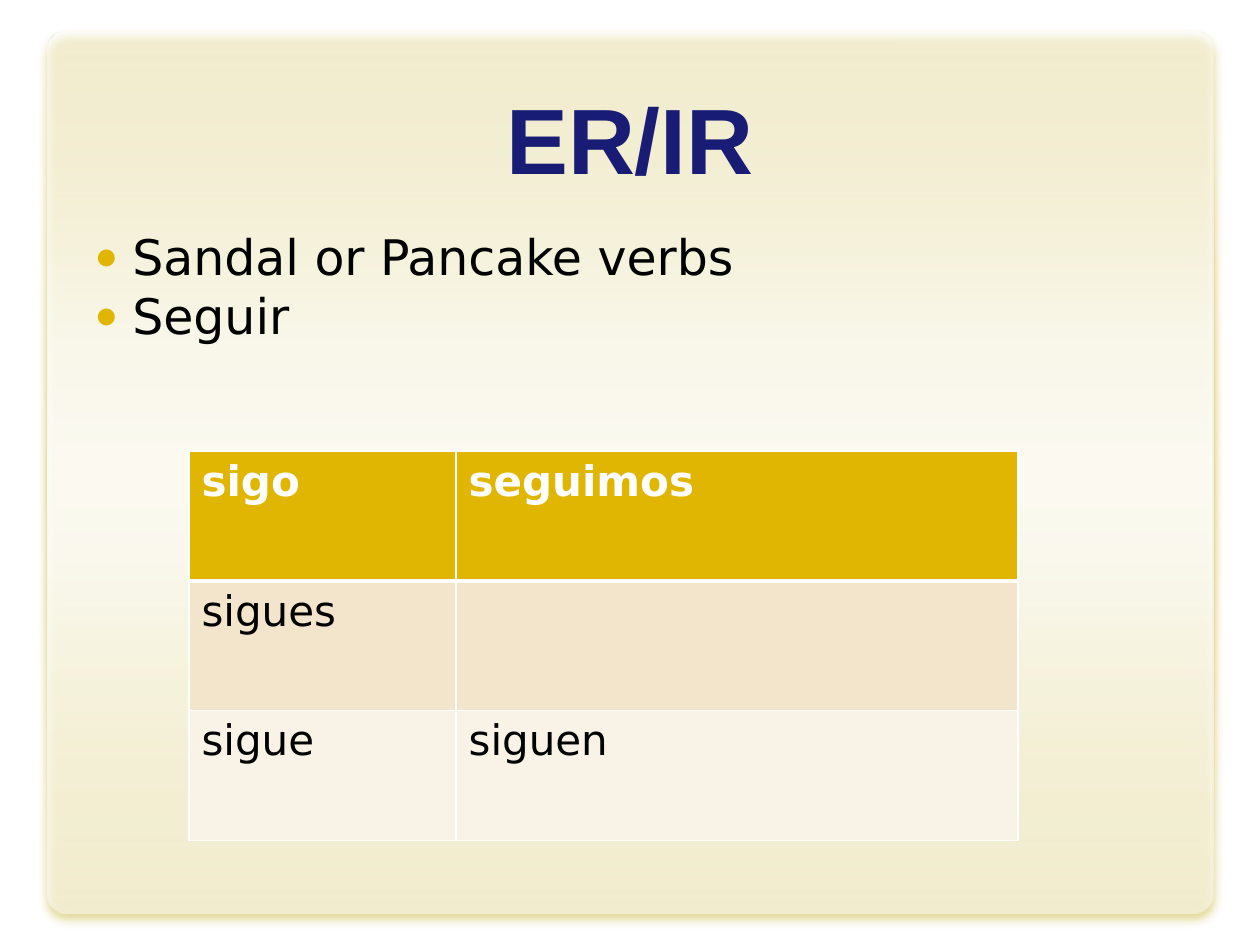
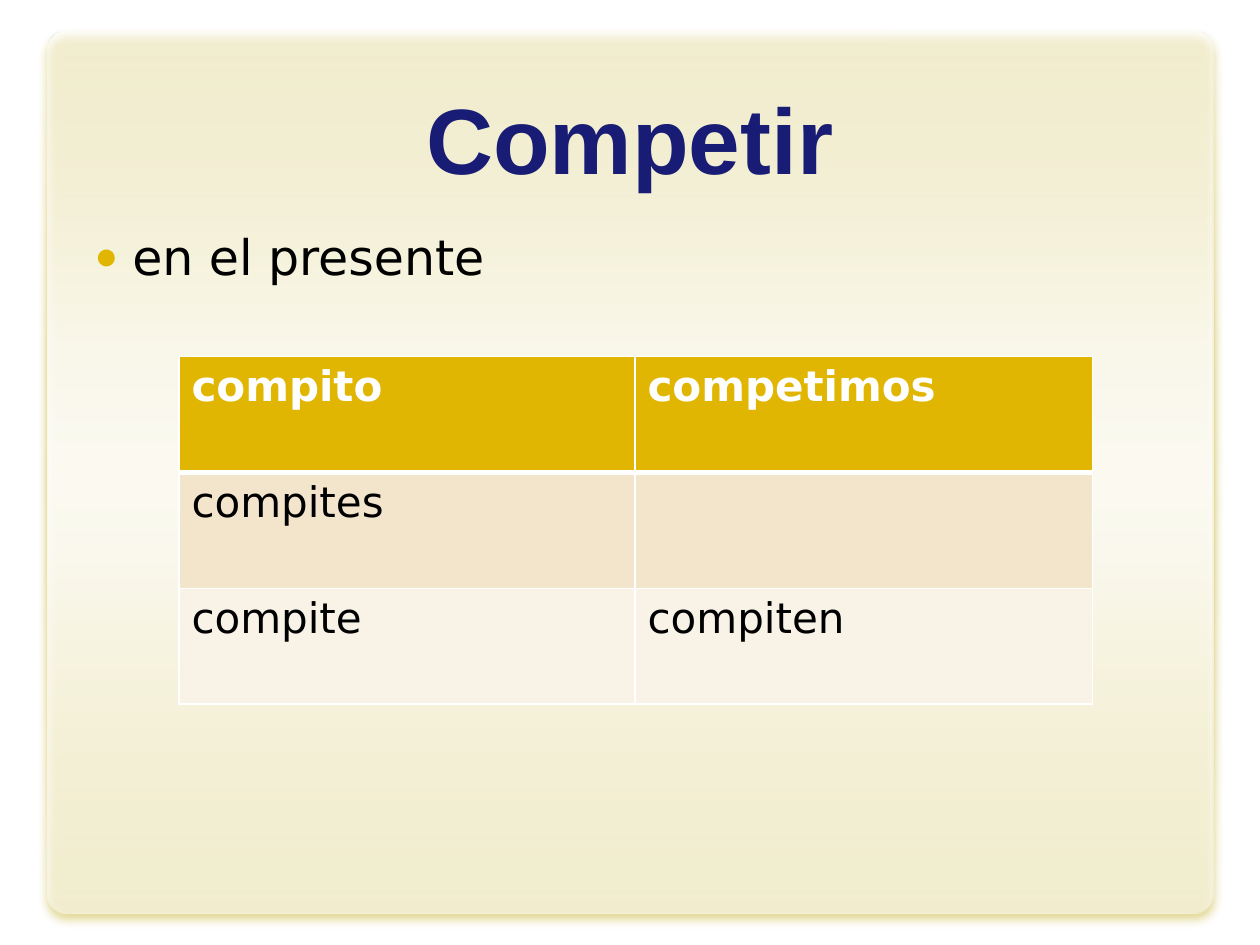
import pptx
import pptx.dml.color
import pptx.enum.shapes
import pptx.enum.text
import pptx.oxml
import pptx.oxml.ns
import pptx.util

inch = pptx.util.Inches
point = pptx.util.Pt
space = pptx.oxml.ns.nsdecls("a")


def hue(code):
    return pptx.dml.color.RGBColor.from_string(code)


def dress(item, style):
    for name, value in style.items():
        if name == "rgb":
            item.color.rgb = hue(value)
        else:
            setattr(item, name, value)


gold = "E0B602"
white = "FFFFFF"
black = "000000"
stops = [(0, 50), (35, 87), (50, 92), (60, 89), (100, 55)]
head = {"name": "Arial", "size": point(53), "bold": True, "rgb": "181C74"}
item = {"name": "DejaVu Sans", "size": point(28), "bold": False, "rgb": black}
top = {"name": "DejaVu Sans", "size": point(24), "bold": True, "rgb": white}
cell = {**top, "bold": False, "rgb": black}
bands = [(gold, top), ("F3E5CC", cell), ("F9F3E7", cell)]
frame = {"word_wrap": True, "auto_size": pptx.enum.text.MSO_AUTO_SIZE.NONE}
inset = {"margin_" + side: inch(0.05) for side in ("left", "top", "right", "bottom")}
spots = [(0.5, 0.33, 9, 1.25), (0.5, 1.75, 9, 4.95)]

pages = [
    {
        "title": "ER/IR",
        "list": ["Sandal or Pancake verbs", "Seguir"],
        "at": (1.5, 3.58),
        "cols": (2.12, 4.46),
        "high": 1.03,
        "verbs": [("sigo", "seguimos"), ("sigues", ""), ("sigue", "siguen")],
    },
    {
        "title": "Competir",
        "list": ["en el presente"],
        "at": (1.42, 2.83),
        "cols": (3.62, 3.63),
        "high": 0.92,
        "verbs": [("compito", "competimos"), ("compites", ""), ("compite", "compiten")],
    },
]

deck = pptx.Presentation()
dress(deck, {"slide_width": inch(10), "slide_height": inch(7.5)})
layout = deck.slide_layouts[1]

for page in pages:
    slide = deck.slides.add_slide(layout)

    panel = slide.shapes.add_shape(
        pptx.enum.shapes.MSO_SHAPE.ROUNDED_RECTANGLE,
        inch(0.38), inch(0.25), inch(9.25), inch(7),
    )
    panel.adjustments[0] = 0.022
    panel.fill.gradient()
    panel.fill.gradient_angle = 270
    ramp = panel.element.spPr.find(".//" + pptx.oxml.ns.qn("a:gsLst"))
    ramp.clear()
    for place, alpha in stops:
        ramp.append(pptx.oxml.parse_xml(
            f'<a:gs {space} pos="{place * 1000}"><a:srgbClr val="{white}">'
            f'<a:alpha val="{alpha * 1000}"/></a:srgbClr></a:gs>'
        ))
    panel.line.fill.background()
    panel.shadow.inherit = False
    glow = panel.element.spPr.find(pptx.oxml.ns.qn("a:effectLst"))
    glow.append(pptx.oxml.parse_xml(
        f'<a:outerShdw {space} blurRad="{point(5)}" dist="{point(3.6)}" dir="5400000"'
        ' rotWithShape="0"><a:srgbClr val="C5AF25"><a:alpha val="90000"/>'
        '</a:srgbClr></a:outerShdw>'
    ))
    slide.shapes.element.insert(2, panel.element)

    title, body = slide.placeholders
    for holder, spot in zip((title, body), spots):
        dress(holder, dict(zip(("left", "top", "width", "height"), map(inch, spot))))
        dress(holder.text_frame, frame)
    title.text_frame.text = page["title"]
    title.text_frame.vertical_anchor = pptx.enum.text.MSO_ANCHOR.BOTTOM
    line = title.text_frame.paragraphs[0]
    line.alignment = pptx.enum.text.PP_ALIGN.CENTER
    dress(line.runs[0].font, head)

    dress(body.text_frame, inset)
    body.text_frame.text = "\n".join(page["list"])
    for line in body.text_frame.paragraphs:
        line.space_before = point(0)
        dress(line.runs[0].font, item)
        props = line._p.get_or_add_pPr()
        props.set("marL", str(inch(0.5)))
        props.set("indent", str(inch(-0.3)))
        for mark in (
            f'<a:buClr {space}><a:srgbClr val="{gold}"/></a:buClr>',
            f'<a:buSzPct {space} val="80000"/>',
            f'<a:buFont {space} typeface="Arial"/>',
            f'<a:buChar {space} char="●"/>',
        ):
            props.append(pptx.oxml.parse_xml(mark))

    left, start = page["at"]
    grid = slide.shapes.add_table(
        3, 2, inch(left), inch(start), inch(sum(page["cols"])), inch(3 * page["high"])
    ).table
    for column, wide in zip(grid.columns, page["cols"]):
        column.width = inch(wide)
    for index, (row, words, (shade, style)) in enumerate(zip(grid.rows, page["verbs"], bands)):
        row.height = inch(page["high"])
        edges = {"L": 1, "R": 1, "T": 3 if index == 1 else 1, "B": 3 if index == 0 else 1}
        for box, word in zip(row.cells, words):
            props = box._tc.get_or_add_tcPr()
            for side, weight in edges.items():
                props.append(pptx.oxml.parse_xml(
                    f'<a:ln{side} {space} w="{point(weight)}"><a:solidFill>'
                    f'<a:srgbClr val="{white}"/></a:solidFill></a:ln{side}>'
                ))
            box.fill.solid()
            box.fill.fore_color.rgb = hue(shade)
            if word:
                box.text = word
                dress(box.text_frame.paragraphs[0].runs[0].font, style)

deck.save("out.pptx")
